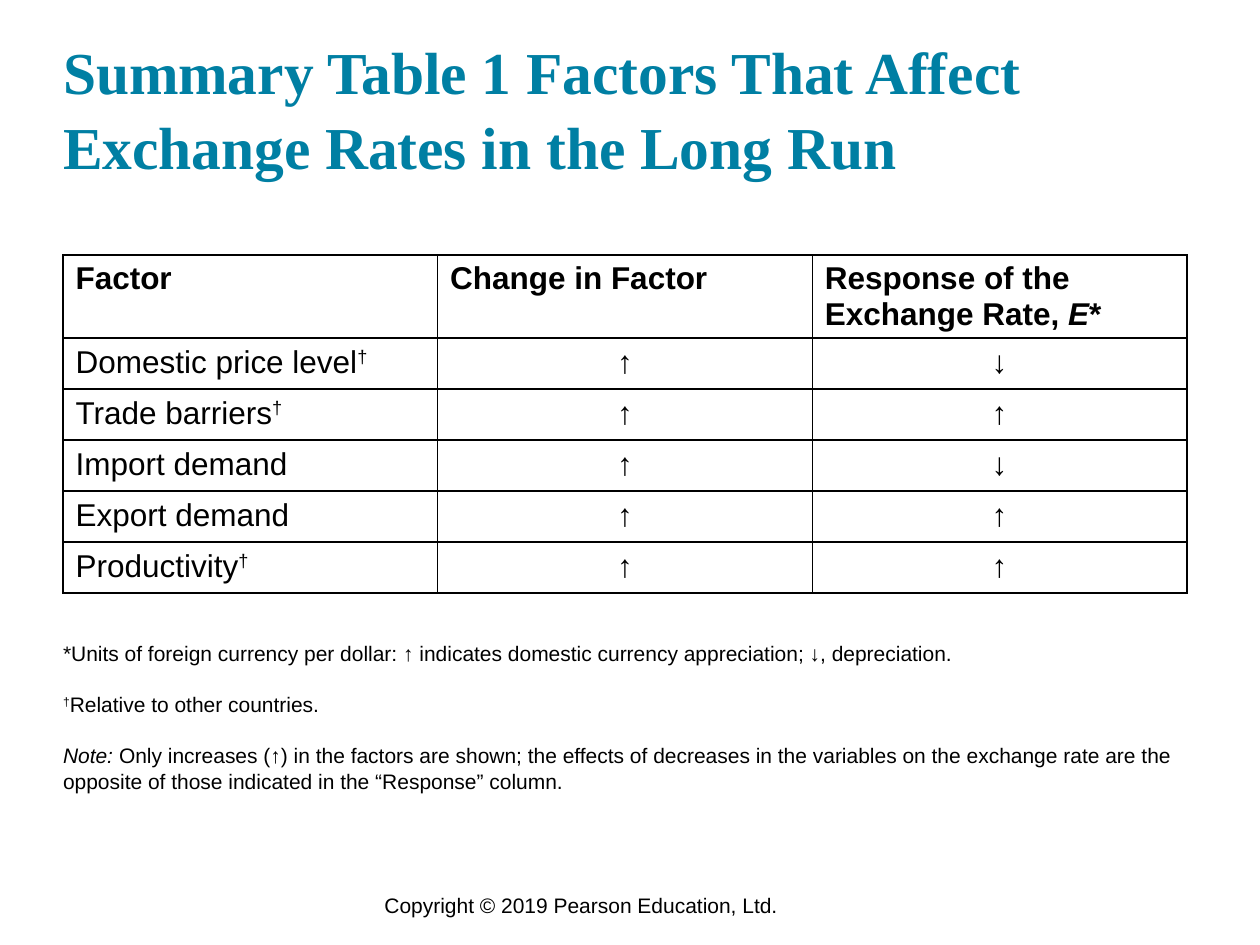
"""Build the summary slide on long-run exchange rate factors."""
import pptx
import pptx.dml.color
import pptx.enum.text
import pptx.oxml
import pptx.oxml.ns
import pptx.util

TITLE = "Summary Table 1 Factors That Affect Exchange Rates in the Long Run"
UP, DOWN = "↑", "↓"
DAGGER = ("†", "super")
HEADER = [
    ["Factor"],
    ["Change in Factor"],
    ["Response of the Exchange Rate, ", ("E", "italic"), "*"],
]
FACTORS = [
    (["Domestic price level", DAGGER], UP, DOWN),
    (["Trade barriers", DAGGER], UP, UP),
    (["Import demand"], UP, DOWN),
    (["Export demand"], UP, UP),
    (["Productivity", DAGGER], UP, UP),
]
NOTES = [
    ["*Units of foreign currency per dollar: ↑ indicates domestic currency "
     "appreciation; ↓, depreciation."],
    [DAGGER, "Relative to other countries."],
    [("Note: ", "italic"),
     "Only increases (↑) in the factors are shown; the effects of decreases in "
     "the variables on the exchange rate are the opposite of those indicated in "
     "the “Response” column."],
]
COPYRIGHT = "Copyright © 2019 Pearson Education, Ltd."

COLORS = {"title": "007FA3", "text": "000000", "border": "000000"}
BOXES = {
    "title": (63, 30, 1134, 151),
    "table": (63, 255, 1124, 338),
    "notes": (63, 640, 1134, 204),
    "copyright": (372, 886, 850, 38),
}
HEADER_H, ROW_H = 83, 51
SCALE = 914400 / 126
ALIGN = pptx.enum.text.PP_ALIGN
ANCHOR = pptx.enum.text.MSO_ANCHOR


def px(n):
    return pptx.util.Emu(round(n * SCALE))


def box(name):
    return [px(n) for n in BOXES[name]]


def write(p, runs, size, color="text", name="Arial", bold=False, align=ALIGN.LEFT):
    p.alignment = align
    p.font.size = pptx.util.Pt(size)
    p.font.name = name
    p.font.bold = bold
    p.font.color.rgb = pptx.dml.color.RGBColor.from_string(COLORS[color])
    for run in runs:
        text, style = (run, None) if isinstance(run, str) else run
        r = p.add_run()
        r.text = text
        if style == "italic":
            r.font.italic = True
        elif style == "super":
            r._r.get_or_add_rPr().set("baseline", "30000")


def place(sp, name, anchor):
    sp.left, sp.top, sp.width, sp.height = box(name)
    tf = sp.text_frame
    tf.margin_left = tf.margin_top = tf.margin_right = tf.margin_bottom = 0
    tf.vertical_anchor = anchor
    tf.auto_size = pptx.enum.text.MSO_AUTO_SIZE.NONE
    tf.word_wrap = True
    return tf


def add_borders(cell):
    tc_pr = cell._tc.get_or_add_tcPr()
    for side in ("lnL", "lnR", "lnT", "lnB"):
        tc_pr.append(pptx.oxml.parse_xml(
            f'<a:{side} {pptx.oxml.ns.nsdecls("a")} w="12700"><a:solidFill>'
            f'<a:srgbClr val="{COLORS["border"]}"/></a:solidFill></a:{side}>'))


def add_factor_table(slide):
    rows = [HEADER] + [[factor, [change], [response]]
                       for factor, change, response in FACTORS]
    table = slide.shapes.add_table(len(rows), len(HEADER), *box("table")).table
    table.first_row = table.horz_banding = False
    for i, row in enumerate(rows):
        table.rows[i].height = px(ROW_H if i else HEADER_H)
        for j, runs in enumerate(row):
            cell = table.cell(i, j)
            add_borders(cell)
            cell.fill.background()
            write(cell.text_frame.paragraphs[0], runs, 18, bold=i == 0,
                  align=ALIGN.CENTER if i and j else ALIGN.LEFT)


def add_notes(sp):
    tf = place(sp, "notes", ANCHOR.TOP)
    for i, runs in enumerate(NOTES):
        p = tf.add_paragraph() if i else tf.paragraphs[0]
        p_pr = p._p.get_or_add_pPr()
        p_pr.set("marL", "0")
        p_pr.set("indent", "0")
        p_pr.append(pptx.oxml.parse_xml(f'<a:buNone {pptx.oxml.ns.nsdecls("a")}/>'))
        p.space_before = pptx.util.Pt(15 if i else 0)
        write(p, runs, 12)


def main():
    prs = pptx.Presentation()
    prs.slide_width, prs.slide_height = px(1260), px(945)
    slide = prs.slides.add_slide(prs.slide_layouts[1])

    p = place(slide.shapes.title, "title", ANCHOR.BOTTOM).paragraphs[0]
    p.line_spacing = 1.04
    write(p, [TITLE], 34, "title", "Times New Roman", True)
    add_factor_table(slide)
    add_notes(slide.placeholders[1])

    tf = slide.shapes.add_textbox(*box("copyright")).text_frame
    tf.word_wrap = True
    write(tf.paragraphs[0], [COPYRIGHT], 12)

    prs.save("out.pptx")


if __name__ == "__main__":
    main()
